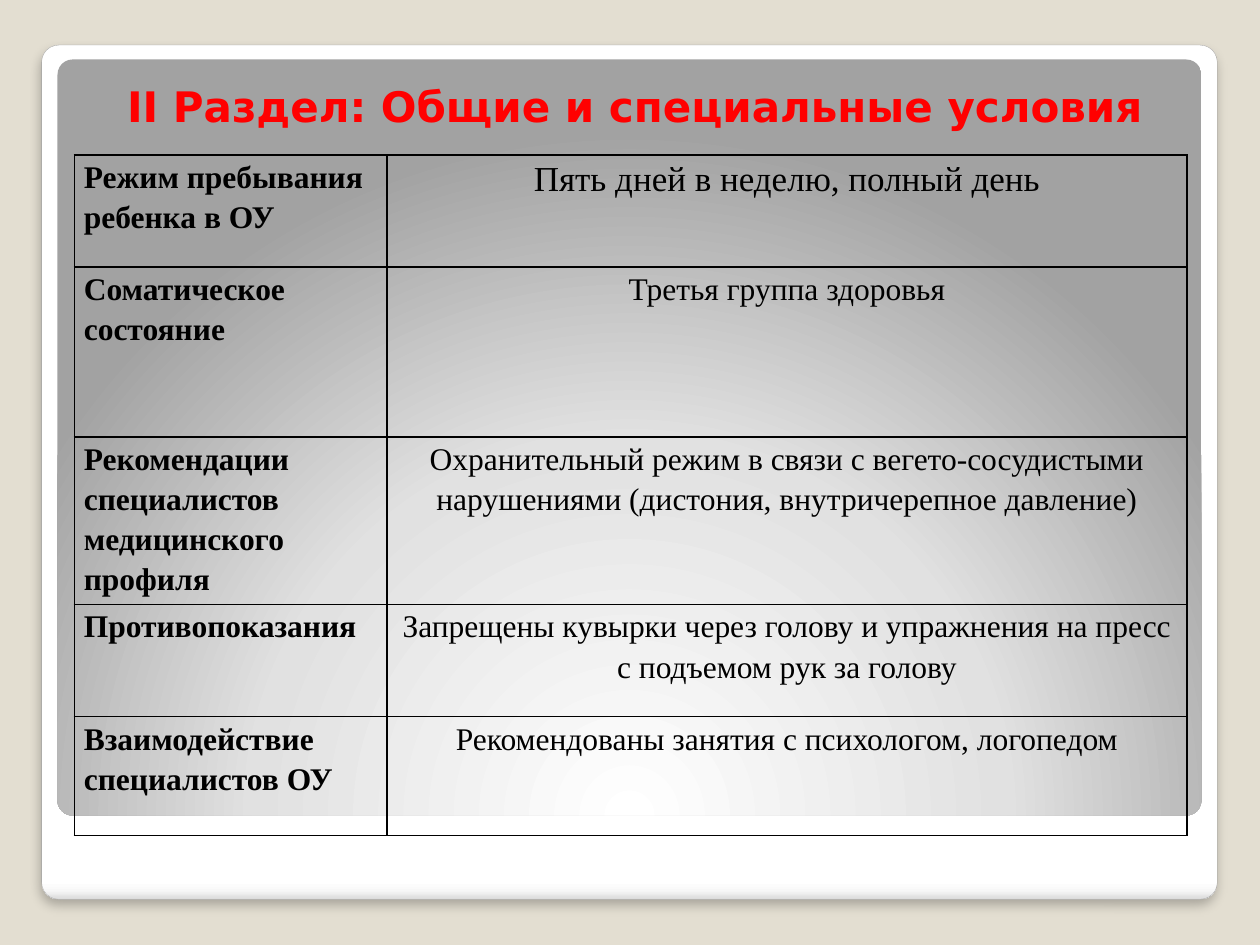
from dataclasses import dataclass

from pptx import Presentation
from pptx.dml.color import RGBColor
from pptx.enum.shapes import MSO_SHAPE
from pptx.enum.text import MSO_ANCHOR, PP_ALIGN
from pptx.oxml import parse_xml
from pptx.oxml.ns import nsdecls
from pptx.util import Cm, Pt


@dataclass(frozen=True)
class Theme:
    background: str = "E3DED1"
    title: str = "FF0000"
    text: str = "000000"
    frame_line: str = "A4A4A4"
    border: str = "000000"
    title_font: str = "DejaVu Sans"
    body_font: str = "Times New Roman"
    title_size: int = 24
    lead_size: int = 20
    body_size: int = 18
    frame_stops: tuple = ((0, "FFFFFF"), (98, "FFFFFF"), (99, "F7F7F7"), (100, "DADADA"))
    panel_stops: tuple = ((0, "FFFFFF"), (55, "E1E1E1"), (100, "A2A2A2"))


@dataclass(frozen=True)
class Box:
    """A rectangle in centimetres."""
    left: float
    top: float
    width: float
    height: float

    def lengths(self):
        return Cm(self.left), Cm(self.top), Cm(self.width), Cm(self.height)

    def inside(self, left, top, width, height):
        """A box whose corner is measured from the corner of this one."""
        return Box(self.left + left, self.top + top, width, height)


THEME = Theme()
LINEAR_DOWN = '<a:lin ang="5400000" scaled="0"/>'
CIRCLE_FROM_BELOW = (
    '<a:path path="circle">'
    '<a:fillToRect l="50000" t="175000" r="50000" b="-75000"/></a:path>'
)
COLUMN_WIDTHS = (6.3, 16.13)
ROWS = (
    (2.26, "Режим пребывания ребенка в ОУ", "Пять дней в неделю, полный день"),
    (3.43, "Соматическое состояние", "Третья группа здоровья"),
    (3.38, "Рекомендации специалистов медицинского профиля",
     "Охранительный режим в связи с вегето-сосудистыми нарушениями "
     "(дистония, внутричерепное давление)"),
    (2.26, "Противопоказания",
     "Запрещены кувырки через голову и упражнения на пресс с подъемом рук за голову"),
    (2.39, "Взаимодействие специалистов ОУ",
     "Рекомендованы занятия с психологом, логопедом"),
)


def write_text(frame, text, *, size=THEME.body_size, font=THEME.body_font,
               color=THEME.text, bold=False, align=PP_ALIGN.LEFT, spacing=1.0):
    frame.word_wrap = True
    para = frame.paragraphs[0]
    para.alignment = align
    para.line_spacing = spacing
    span = para.add_run()
    span.text = text
    span.font.size = Pt(size)
    span.font.name = font
    span.font.bold = bold
    span.font.color.rgb = RGBColor.from_string(color)


def add_rounded_panel(page, box, stops, direction):
    """Add a rounded rectangle with a gradient, without line or shadow."""
    panel = page.shapes.add_shape(MSO_SHAPE.ROUNDED_RECTANGLE, *box.lengths())
    panel.adjustments[0] = 0.02
    panel.shadow.inherit = False
    panel.line.fill.background()
    colors = "".join(
        f'<a:gs pos="{position * 1000}"><a:srgbClr val="{color}"/></a:gs>'
        for position, color in stops
    )
    gradient = parse_xml(
        f'<a:gradFill {nsdecls("a")} rotWithShape="1">'
        f'<a:gsLst>{colors}</a:gsLst>{direction}</a:gradFill>'
    )
    panel.element.spPr.prstGeom.addnext(gradient)
    return panel


def add_frame(page, box):
    """Add the white card with its soft shadow and the grey panel on it."""
    card = add_rounded_panel(page, box, THEME.frame_stops, LINEAR_DOWN)
    card.line.color.rgb = RGBColor.from_string(THEME.frame_line)
    card.line.width = Pt(0.16)
    effects = card.element.spPr.find("{*}effectLst")
    effects.append(parse_xml(
        f'<a:outerShdw {nsdecls("a")} blurRad="{Pt(6)}" dist="{Pt(4)}" dir="5400000" '
        'algn="t" rotWithShape="0"><a:srgbClr val="000000">'
        '<a:alpha val="25000"/></a:srgbClr></a:outerShdw>'
    ))
    add_rounded_panel(page, box.inside(0.32, 0.29, 23.06, 15.24),
                      THEME.panel_stops, CIRCLE_FROM_BELOW)


def add_title(page, box, text):
    title = page.shapes.add_textbox(*box.lengths())
    title.text_frame.vertical_anchor = MSO_ANCHOR.BOTTOM
    write_text(title.text_frame, text, size=THEME.title_size, font=THEME.title_font,
               color=THEME.title, bold=True, align=PP_ALIGN.CENTER)


def format_cell(cell):
    cell.fill.background()
    cell.margin_left = cell.margin_right = Cm(0.19)
    cell.margin_top = cell.margin_bottom = 0
    properties = cell._tc.get_or_add_tcPr()
    for index, side in enumerate(("lnL", "lnR", "lnT", "lnB")):
        properties.insert(index, parse_xml(
            f'<a:{side} {nsdecls("a")} w="{Pt(1)}"><a:solidFill>'
            f'<a:srgbClr val="{THEME.border}"/></a:solidFill></a:{side}>'
        ))


def add_conditions_table(page, box):
    table = page.shapes.add_table(len(ROWS), len(COLUMN_WIDTHS), *box.lengths()).table
    table.first_row = table.horz_banding = False
    for column, width in zip(table.columns, COLUMN_WIDTHS):
        column.width = Cm(width)
    for index, (height, label, value) in enumerate(ROWS):
        table.rows[index].height = Cm(height)
        label_cell, value_cell = table.rows[index].cells
        format_cell(label_cell)
        format_cell(value_cell)
        write_text(label_cell.text_frame, label, bold=True, spacing=1.15)
        write_text(value_cell.text_frame, value, align=PP_ALIGN.CENTER, spacing=1.15,
                   size=THEME.body_size if index else THEME.lead_size)


def build_conditions_page(deck):
    page = deck.slides.add_slide(deck.slide_layouts[6])
    page.background.fill.solid()
    page.background.fill.fore_color.rgb = RGBColor.from_string(THEME.background)
    card = Box(0.84, 0.91, 23.7, 17.22)
    add_frame(page, card)
    add_conditions_table(page, card.inside(
        0.66, 2.21, sum(COLUMN_WIDTHS), sum(row[0] for row in ROWS)))
    add_title(page, card.inside(0.43, 0, 23.06, 1.85),
              "II Раздел: Общие и специальные условия")


def main():
    deck = Presentation()
    deck.slide_width, deck.slide_height = Cm(25.4), Cm(19.05)
    build_conditions_page(deck)
    deck.save("out.pptx")


if __name__ == "__main__":
    main()
